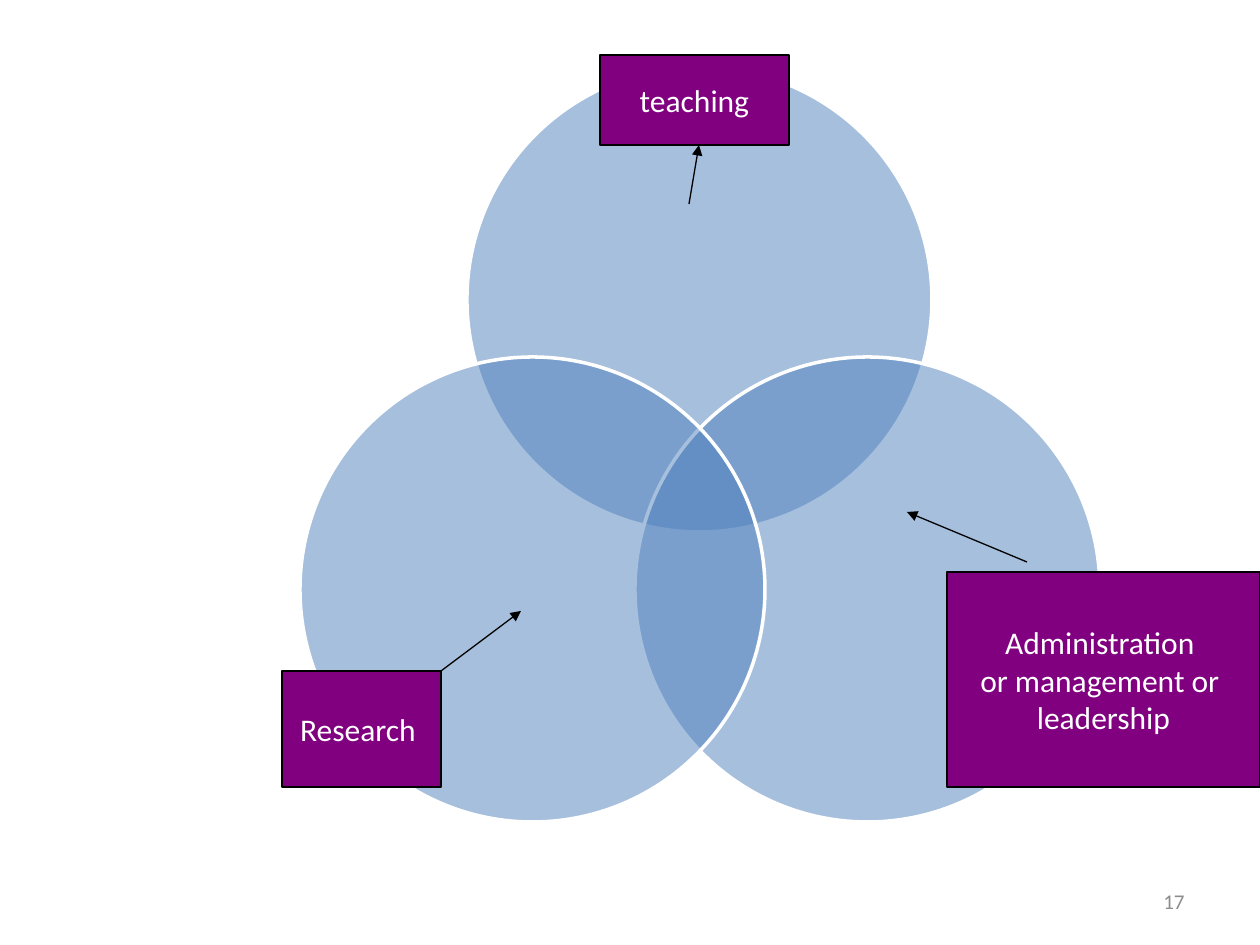
import pptx
import pptx.dml.color
import pptx.enum.shapes
import pptx.enum.text
import pptx.oxml
import pptx.oxml.ns
import pptx.util
from lxml import etree

PX = 914400 / 126
ALIGN = pptx.enum.text.PP_ALIGN
SHAPE = pptx.enum.shapes.MSO_SHAPE


def emu(*lengths):
    """Turn px lengths into EMU."""
    return [pptx.util.Emu(round(length * PX)) for length in lengths]


def paint(color_format, hex_color):
    color_format.rgb = pptx.dml.color.RGBColor.from_string(hex_color)


deck = pptx.Presentation()
deck.slide_width, deck.slide_height = emu(1260, 945)
page = deck.slides.add_slide(deck.slide_layouts[6])

# Slide number
number = page.shapes.add_textbox(*emu(903, 876, 294, 50))
number.text_frame.word_wrap = True
number.text_frame.vertical_anchor = pptx.enum.text.MSO_ANCHOR.MIDDLE
para = number.text_frame.paragraphs[0]
para.text = "17"
para.alignment = ALIGN.RIGHT
para.font.name = "Calibri"
para.font.size = pptx.util.Pt(12)
paint(para.font.color, "8C8C8C")

# Three overlapping circles
DIAMETER = 465
for left, top in [(467, 67), (635, 357), (300, 357)]:
    circle = page.shapes.add_shape(SHAPE.OVAL, *emu(left, top, DIAMETER, DIAMETER))
    circle.shadow.inherit = False
    circle.fill.solid()
    paint(circle.fill.fore_color, "4F81BD")
    fill_color = circle.fill._xPr.find(".//" + pptx.oxml.ns.qn("a:srgbClr"))
    etree.SubElement(fill_color, pptx.oxml.ns.qn("a:alpha"), val="50000")
    paint(circle.line.color, "FFFFFF")
    circle.line.width = pptx.util.Pt(2)

# Labels
labels = [
    (282, 671, 159, 116, ["Research "]),
    (600, 55, 189, 90, ["teaching"]),
    (947, 572, 313, 215, ["Administration ", "or management or ", "leadership"]),
]
for left, top, width, height, lines in labels:
    box = page.shapes.add_shape(SHAPE.RECTANGLE, *emu(left, top, width, height))
    box.shadow.inherit = False
    box.fill.solid()
    paint(box.fill.fore_color, "800080")
    paint(box.line.color, "000000")
    box.line.width = pptx.util.Pt(0.75)
    box.text_frame.word_wrap = False
    box.text_frame.vertical_anchor = pptx.enum.text.MSO_ANCHOR.MIDDLE
    box.text_frame.text = "\n".join(lines)
    for para in box.text_frame.paragraphs:
        para.alignment = ALIGN.CENTER
        para.font.name = "Calibri"
        para.font.size = pptx.util.Pt(18)
        paint(para.font.color, "FFFFFF")

# Arrows between labels and circles
for ends in [(689, 204, 699, 145), (441, 671, 521, 611), (1027, 562, 907, 512)]:
    arrow = page.shapes.add_connector(
        pptx.enum.shapes.MSO_CONNECTOR.STRAIGHT, *emu(*ends))
    paint(arrow.line.color, "000000")
    arrow.line.width = pptx.util.Pt(0.75)
    properties = arrow._element.spPr
    outline = properties.find(pptx.oxml.ns.qn("a:ln"))
    etree.SubElement(outline, pptx.oxml.ns.qn("a:tailEnd"), type="triangle")
    etree.SubElement(properties, pptx.oxml.ns.qn("a:effectLst"))

deck.save("out.pptx")
